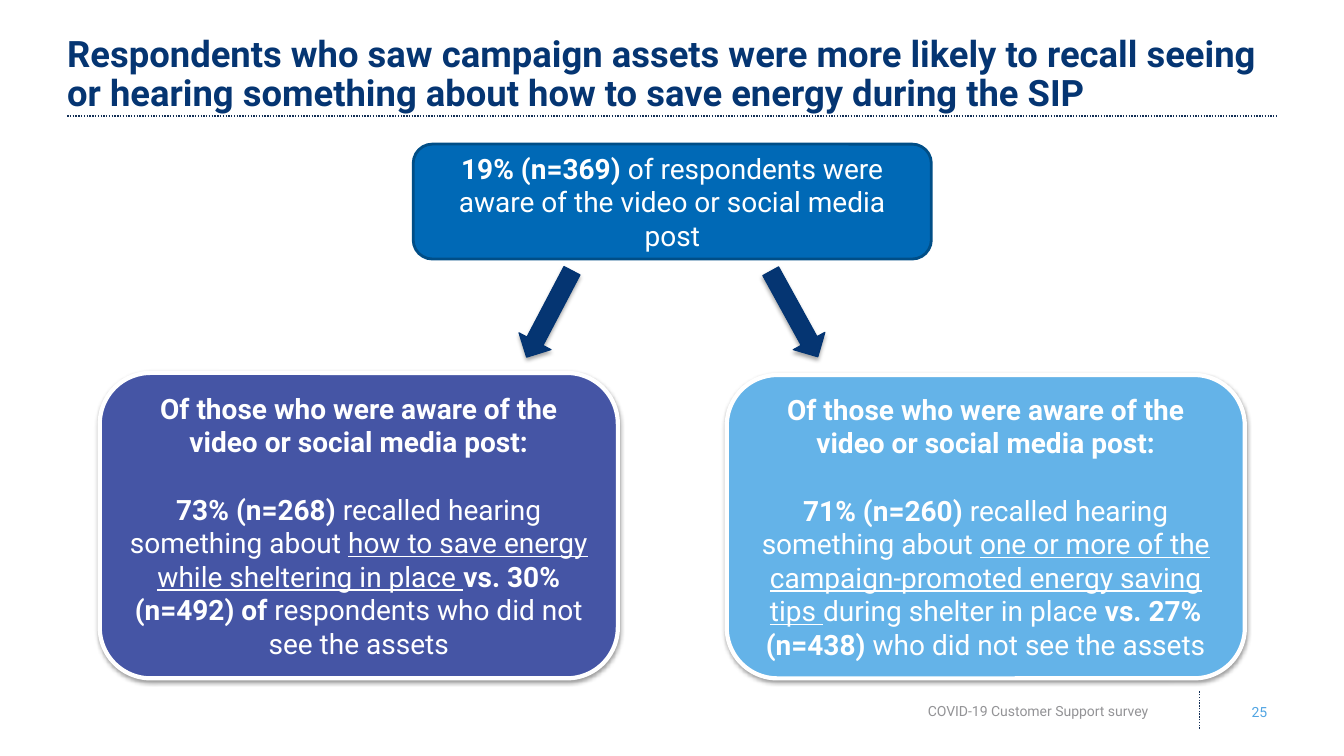
import pptx
import pptx.dml.color
import pptx.enum.dml
import pptx.enum.shapes
import pptx.enum.text
import pptx.oxml
import pptx.oxml.ns
import pptx.util

COLORS = {
    "navy": "053572", "arrow edge": "023472", "rule": "132F56",
    "blue": "0069B6", "blue edge": "004E87", "indigo": "4555A5",
    "sky": "64B3E8", "white": "FFFFFF", "gray": "939396",
    "page number": "51A5E3", "shadow": "000000",
}
SHAPES = pptx.enum.shapes.MSO_SHAPE
ALIGN = pptx.enum.text.PP_ALIGN


def color(name):
    return pptx.dml.color.RGBColor.from_string(COLORS[name])


class SlideBuilder:
    """Places elements on a grid of 40 columns by 30 rows."""
    font = "Roboto"

    def __init__(self, presentation):
        self.column = presentation.slide_width / 40
        self.row = presentation.slide_height / 30
        self.slide = presentation.slides.add_slide(presentation.slide_layouts[6])

    def place(self, *numbers):
        units = (self.column, self.row) * 2
        return [round(number * unit) for number, unit in zip(numbers, units)]

    def fill_text(self, shape, paragraphs, size, text_color, align):
        """Each paragraph is a list of (text, style); style may hold b and u."""
        frame = shape.text_frame
        frame.word_wrap = True
        frame.vertical_anchor = pptx.enum.text.MSO_ANCHOR.MIDDLE
        for index, pieces in enumerate(paragraphs):
            paragraph = frame.add_paragraph() if index else frame.paragraphs[0]
            paragraph.alignment = align
            for text, style in pieces:
                run = paragraph.add_run()
                run.text = text
                run.font.name = self.font
                run.font.size = pptx.util.Pt(size)
                run.font.color.rgb = color(text_color)
                run.font.bold = "b" in style
                run.font.underline = "u" in style
        return frame

    def text(self, area, text, size, text_color, style="", align=ALIGN.RIGHT):
        box = self.slide.shapes.add_textbox(*self.place(*area))
        return self.fill_text(box, [[(text, style)]], size, text_color, align)

    def rule(self, *ends):
        line = self.slide.shapes.add_connector(
            pptx.enum.shapes.MSO_CONNECTOR.STRAIGHT, *self.place(*ends))
        line.line.color.rgb = color("rule")
        line.line.width = pptx.util.Pt(1)
        line.line.dash_style = pptx.enum.dml.MSO_LINE.ROUND_DOT
        line._element.spPr.append(pptx.oxml.parse_xml(
            f'<a:effectLst {pptx.oxml.ns.nsdecls("a")}/>'))

    def shape(self, kind, area, fill, edge, width):
        shape = self.slide.shapes.add_shape(kind, *self.place(*area))
        shape.shadow.inherit = False
        shape.fill.solid()
        shape.fill.fore_color.rgb = color(fill)
        shape.line.color.rgb = color(edge)
        shape.line.width = pptx.util.Pt(width)
        return shape

    def drop_shadow(self, shape, opacity, distance):
        effects = shape._element.spPr.find(pptx.oxml.ns.qn("a:effectLst"))
        effects.append(pptx.oxml.parse_xml(
            f'<a:outerShdw {pptx.oxml.ns.nsdecls("a")} '
            f'blurRad="{pptx.util.Pt(3.1)}" dist="{pptx.util.Pt(distance)}" '
            f'dir="5400000" rotWithShape="0"><a:srgbClr val="{COLORS["shadow"]}">'
            f'<a:alpha val="{opacity * 1000}"/></a:srgbClr></a:outerShdw>'))

    def arrow(self, left, rotation):
        arrow = self.shape(SHAPES.DOWN_ARROW, (left, 10.52, 1.08, 3.88),
                           "navy", "arrow edge", 0.75)
        arrow.rotation = rotation
        self.drop_shadow(arrow, 35, 1.8)

    def card(self, area, fill, edge, width, paragraphs):
        card = self.shape(SHAPES.FLOWCHART_ALTERNATE_PROCESS, area, fill, edge, width)
        self.fill_text(card, paragraphs, 20, "white", ALIGN.CENTER)
        return card

    def finding(self, left, top, fill, pieces):
        heading = [[("Of those who were aware of the", "b")],
                   [("video or social media post:", "b")]]
        card = self.card((left, top, 15.42, 26.92 - top), fill, "white", 3,
                         heading + [pieces])
        card.text_frame.paragraphs[-1].space_before = pptx.util.Pt(24)
        self.drop_shadow(card, 38, 1.6)


def main():
    presentation = pptx.Presentation()
    presentation.slide_width = pptx.util.Inches(13.33)
    presentation.slide_height = pptx.util.Inches(7.5)
    builder = SlideBuilder(presentation)

    # Title and dotted rules
    builder.rule(2, 4.6, 38, 4.6)
    builder.rule(35.7, 28.92, 35.7, 27.44)
    title = builder.text(
        (2, 1.72, 36, 2.52),
        "Respondents who saw campaign assets were more likely to recall seeing "
        "or hearing something about how to save energy during the SIP",
        26, "navy", "b", ALIGN.LEFT)
    title.margin_left = title.margin_top = title.margin_bottom = 0
    title.paragraphs[0].line_spacing = 0.9

    # Footer
    builder.text((21.63, 27.52, 12.84, 1.4), "COVID-19 Customer Support survey",
                 10, "gray")
    builder.text((36.18, 27.52, 1.83, 1.44), "25", 10, "page number")

    # Awareness and the two findings that follow from it
    builder.card((12.3, 5.72, 15.42, 4.56), "blue", "blue edge", 2, [[
        ("19% (n=369) ", "b"),
        ("of respondents were aware of the video or social media post", "")]])
    builder.arrow(15.81, 27.7)
    builder.finding(2.97, 14.8, "indigo", [
        ("73% (n=268) ", "b"),
        ("recalled hearing something about ", ""),
        ("how to save energy while sheltering in place ", "u"),
        ("vs. 30% (n=492) of ", "b"),
        ("respondents who did not see the assets", "")])
    builder.finding(21.63, 14.88, "sky", [
        ("71% (n=260) ", "b"),
        ("recalled hearing something about ", ""),
        ("one or more of the campaign-promoted energy saving tips ", "u"),
        ("during shelter in place", ""),
        (" vs. 27% (n=438) ", "b"),
        ("who did not see the assets", "")])
    builder.arrow(23.1, 331.2)

    presentation.save("out.pptx")


if __name__ == "__main__":
    main()
